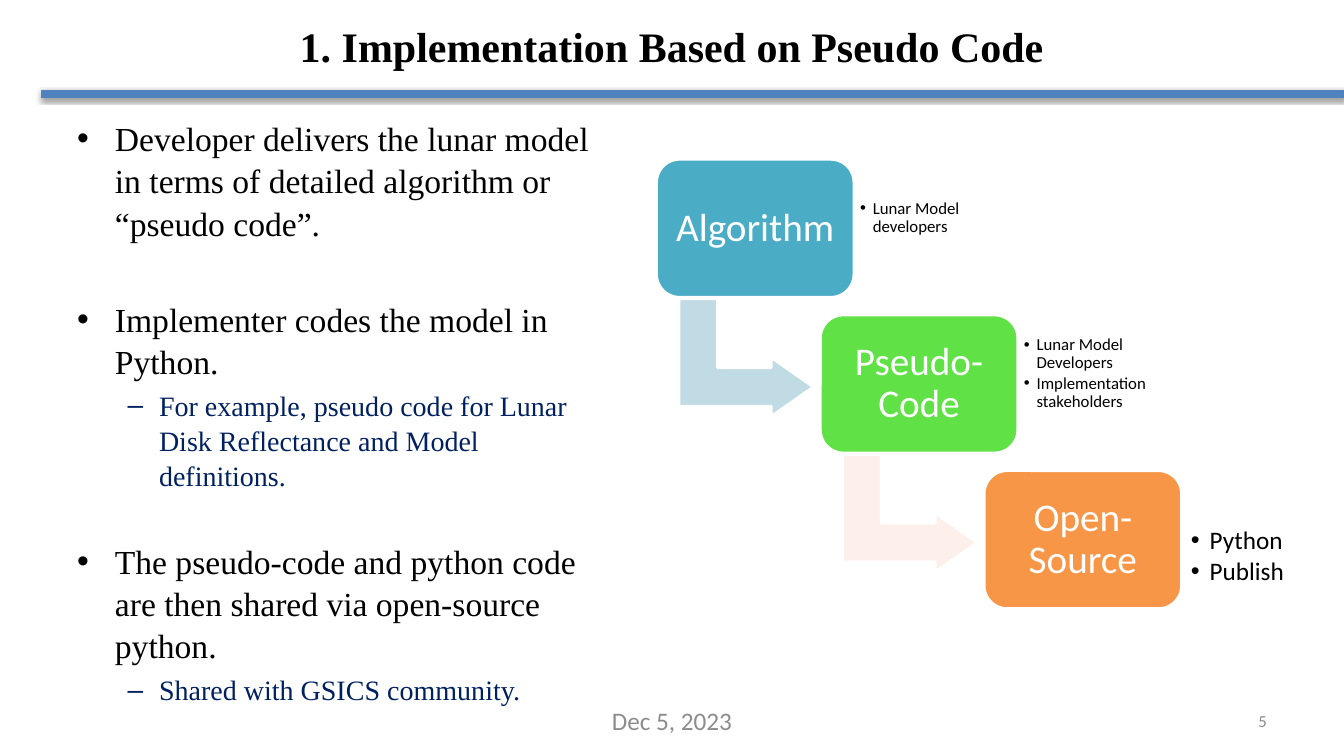
import pptx
import pptx.dml.color
import pptx.enum.shapes
import pptx.enum.text
import pptx.oxml
import pptx.util
from lxml import etree

Pt = pptx.util.Pt
ALIGN = pptx.enum.text.PP_ALIGN
ANCHOR = pptx.enum.text.MSO_ANCHOR
SHAPE = pptx.enum.shapes.MSO_SHAPE
DRAWING = "http://schemas.openxmlformats.org/drawingml/2006/main"
SERIF, SANS = "Times New Roman", "Calibri"

POINTS = [
    (0, "Developer delivers the lunar model in terms of detailed algorithm or “pseudo code”.", 0),
    (0, "Implementer codes the model in Python.", 38.4),
    (1, "For example, pseudo code for Lunar Disk Reflectance and Model definitions.", 4),
    (0, "The pseudo-code and python code are then shared via open-source python.", 32.8),
    (1, "Shared with GSICS community.", 4),
]
LEVELS = [("•", 27, 27, 24, "000000"), ("–", 58.5, 22.5, 20, "002060")]

STEPS = [
    ("Algorithm", "4BACC6", ["Lunar Model developers"], 12, -8),
    ("Pseudo-Code", "60E146", ["Lunar Model Developers", "Implementation stakeholders"], 12, -8),
    ("Open-Source", "F79646", ["Python", "Publish"], 18, 11.5),
]
ARROW_FILLS = ["C1DBE5", "FDEFE9"]
STEP_LEFT, STEP_TOP, STEP_WIDTH, STEP_HEIGHT = 469, 113.8, 141, 98.6
STEP_ACROSS, STEP_DOWN = 117, 111.2


def rgb(value):
    """Turn a hex string into a colour."""
    return pptx.dml.color.RGBColor.from_string(value)


def style(paragraph, size, color, font, bold=False):
    """Format every run of a paragraph."""
    for run in paragraph.runs:
        run.font.size = Pt(size)
        run.font.name = font
        run.font.bold = bold
        run.font.color.rgb = rgb(color)


def bullet(paragraph, mark, left, hang):
    """Give a paragraph a bullet with a hanging indent."""
    properties = paragraph._p.get_or_add_pPr()
    properties.set("marL", str(Pt(left)))
    properties.set("indent", str(Pt(-hang)))
    etree.SubElement(properties, f"{{{DRAWING}}}buFont", typeface="Arial")
    etree.SubElement(properties, f"{{{DRAWING}}}buChar", char=mark)


def text_frame(slide, left, top, width, height, anchor=ANCHOR.TOP, inset=None):
    """Add a wrapping text box and return its frame."""
    frame = slide.shapes.add_textbox(Pt(left), Pt(top), Pt(width), Pt(height)).text_frame
    frame.word_wrap = True
    frame.vertical_anchor = anchor
    if inset is not None:
        set_insets(frame, inset)
    return frame


def set_insets(frame, inset):
    """Set the same inset on all four sides."""
    frame.margin_left = frame.margin_right = Pt(inset)
    frame.margin_top = frame.margin_bottom = Pt(inset)


def add_line_of_text(slide, box, text, size, color, font, align, bold=False):
    """Add a one-line text such as the title or the footer."""
    frame = text_frame(slide, *box, anchor=ANCHOR.MIDDLE)
    frame.text = text
    frame.paragraphs[0].alignment = align
    style(frame.paragraphs[0], size, color, font, bold)


def add_title_rule(slide):
    """Draw the shadowed rule under the title."""
    rule = slide.shapes.add_connector(
        pptx.enum.shapes.MSO_CONNECTOR.STRAIGHT, Pt(29.5), Pt(67), Pt(960), Pt(67))
    rule.line.color.rgb = rgb("4F81BD")
    rule.line.width = Pt(6)
    rule._element.spPr.append(pptx.oxml.parse_xml(
        f'<a:effectLst xmlns:a="{DRAWING}">'
        f'<a:outerShdw blurRad="{Pt(3.1)}" dist="{Pt(1.6)}" dir="5400000" rotWithShape="0">'
        '<a:srgbClr val="000000"><a:alpha val="38000"/></a:srgbClr>'
        '</a:outerShdw></a:effectLst>'))


def add_points(slide):
    """Write the two-level list on the left."""
    frame = text_frame(slide, 48, 79.2, 397, 397.4)
    frame.text = "\n".join(text for _, text, _ in POINTS)
    for paragraph, (level, _, before) in zip(frame.paragraphs, POINTS):
        mark, left, hang, size, color = LEVELS[level]
        paragraph.level = level
        bullet(paragraph, mark, left, hang)
        paragraph.line_spacing = 1.05
        paragraph.space_before = Pt(before)
        style(paragraph, size, color, SERIF)


def add_block(slide, kind, box, fill, adjustments):
    """Add a filled preset shape with a white outline."""
    block = slide.shapes.add_shape(kind, *(Pt(length) for length in box))
    block.shadow.inherit = False
    block.fill.solid()
    block.fill.fore_color.rgb = rgb(fill)
    block.line.color.rgb = rgb("FFFFFF")
    block.line.width = Pt(2)
    for index, value in enumerate(adjustments):
        block.adjustments[index] = value
    return block


def add_step(slide, left, top, label, fill):
    """Add one rounded step with its label."""
    step = add_block(slide, SHAPE.ROUNDED_RECTANGLE,
                     (left, top, STEP_WIDTH, STEP_HEIGHT), fill, [0.167])
    frame = step.text_frame
    frame.word_wrap = True
    frame.vertical_anchor = ANCHOR.MIDDLE
    set_insets(frame, 6)
    frame.text = label
    frame.paragraphs[0].alignment = ALIGN.CENTER
    frame.paragraphs[0].line_spacing = 0.9
    style(frame.paragraphs[0], 28, "FFFFFF", SANS)


def add_step_notes(slide, left, top, notes, size):
    """Add the bulleted remarks beside a step."""
    frame = text_frame(slide, left, top, 103, 80, ANCHOR.MIDDLE, size * 0.37)
    frame.text = "\n".join(notes)
    indent = size * 0.75
    for index, paragraph in enumerate(frame.paragraphs):
        bullet(paragraph, "•", indent, indent)
        paragraph.line_spacing = 0.9
        paragraph.space_before = Pt(size * 0.15 if index else 0)
        style(paragraph, size, "000000", SANS)


def add_staircase(slide):
    """Lay out the steps, their remarks and the arrows between them."""
    for index, (label, fill, notes, size, shift) in enumerate(STEPS):
        left = STEP_LEFT + index * STEP_ACROSS
        top = STEP_TOP + index * STEP_DOWN
        if index < len(ARROW_FILLS):
            arrow = add_block(slide, SHAPE.BENT_UP_ARROW, (left + 22, top + 93.6, 84, 96),
                              ARROW_FILLS[index], [0.328, 0.25, 0.358])
            arrow.rotation = 90
        add_step(slide, left, top, label, fill)
        add_step_notes(slide, left + STEP_WIDTH, top + 10 + shift, notes, size)


def main():
    """Build and save the slide."""
    deck = pptx.Presentation()
    deck.slide_width, deck.slide_height = Pt(960), Pt(540)
    slide = deck.slides.add_slide(deck.slide_layouts[6])
    add_title_rule(slide)
    add_line_of_text(slide, (48, 5, 864, 55.4), "1. Implementation Based on Pseudo Code",
                     30, "000000", SERIF, ALIGN.CENTER, True)
    add_points(slide)
    add_line_of_text(slide, (688, 500.4, 224, 28.8), "5", 12, "8C8C8C", SANS, ALIGN.RIGHT)
    add_line_of_text(slide, (328, 500.4, 304, 28.8), "Dec 5, 2023",
                     18, "8C8C8C", SANS, ALIGN.CENTER)
    add_staircase(slide)
    deck.save("out.pptx")


if __name__ == "__main__":
    main()
